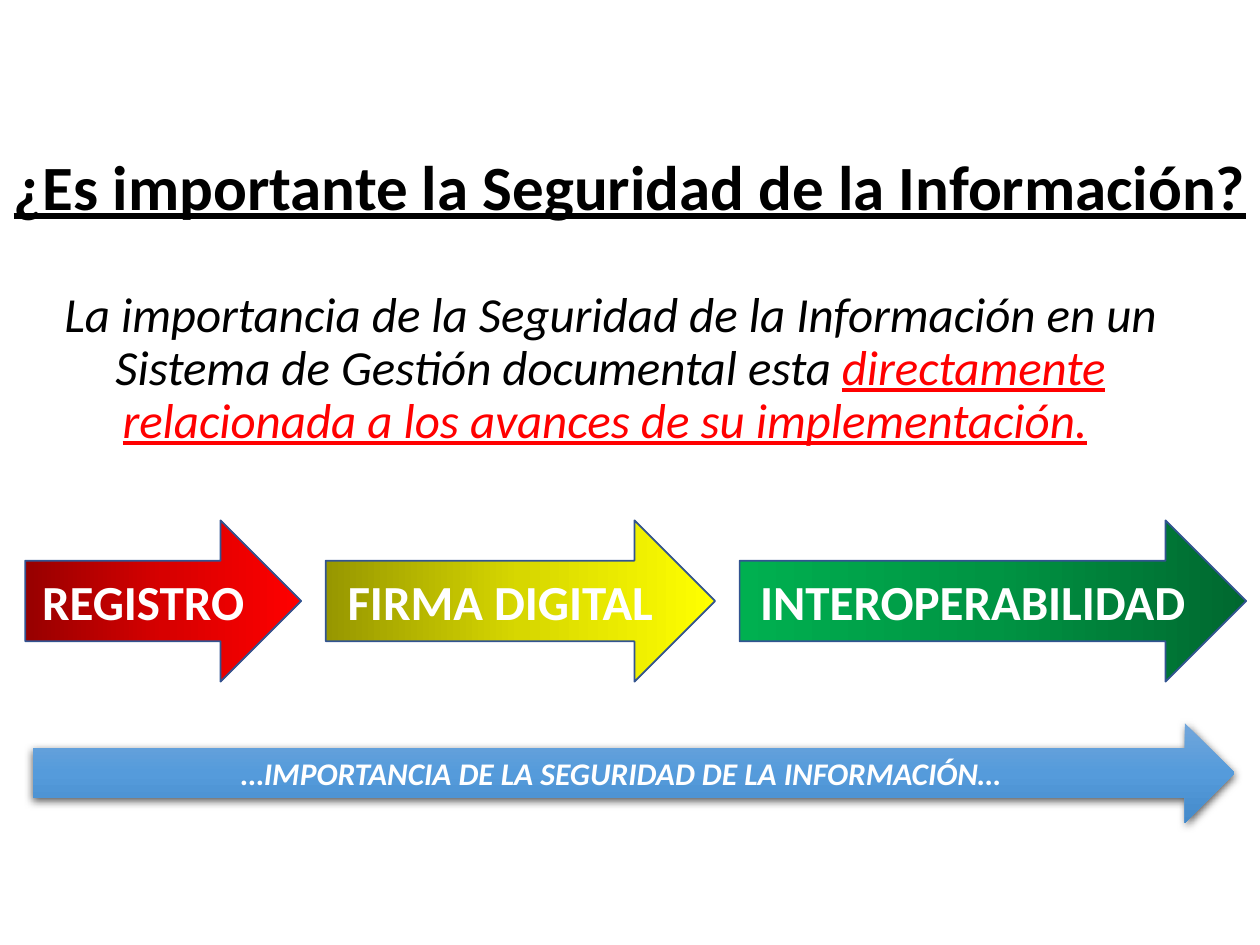
from copy import deepcopy
from lxml import etree
from pptx import Presentation, util as u
from pptx.dml.color import RGBColor as Rgb
from pptx.enum import shapes, text
from pptx.oxml.ns import qn

BLACK, WHITE = Rgb(0, 0, 0), Rgb(255, 255, 255)
RED = Rgb(255, 0, 0)
EDGE = Rgb(0x32, 0x54, 0x91)
REDS = [Rgb(0x97, 0, 0), Rgb(0xD7, 0, 0), RED]
YELLOWS = [Rgb(0x97, 0x97, 0), Rgb(0xD7, 0xD7, 0), Rgb(255, 255, 0)]
GREENS = [Rgb(0, 0x68, 0x2F), Rgb(0, 0x94, 0x43), Rgb(0, 0xB0, 0x50)]
BLUES = [Rgb(0x71, 0xA6, 0xDB), Rgb(0x55, 0x9B, 0xDB), Rgb(0x44, 0x8A, 0xCA)]
FONT = "Calibri"


def place(shape, box):
    shape.left, shape.top, shape.width, shape.height = map(u.Inches, box)


def style(font, size, color, bold=False, italic=False):
    font.name, font.size = FONT, u.Pt(size)
    font.bold, font.italic = bold, italic
    font.color.rgb = color


def set_frame(shape, anchor):
    frame = shape.text_frame
    frame.word_wrap = True
    frame.auto_size = text.MSO_AUTO_SIZE.NONE
    frame.vertical_anchor = anchor
    para = frame.paragraphs[0]
    para.alignment = text.PP_ALIGN.CENTER
    return para


def add_title(slide, box):
    title = slide.shapes.title
    place(title, box)
    para = set_frame(title, text.MSO_ANCHOR.MIDDLE)
    para.text = "¿Es importante la Seguridad de la Información?"
    para.line_spacing = 0.9
    style(para.font, 36, BLACK, bold=True)
    para.font.underline = True


def add_body(slide, box):
    body = slide.placeholders[1]
    place(body, box)
    para = set_frame(body, text.MSO_ANCHOR.TOP)
    para.line_spacing, para.space_before = 0.9, u.Pt(0)
    # Plain paragraph, without bullet or indent
    props = para._p.get_or_add_pPr()
    props.set("marL", "0")
    props.set("indent", "0")
    etree.SubElement(props, qn("a:buNone"))
    parts = [
        ("La importancia de la Seguridad de la Información en un Sistema "
         "de Gestión documental esta ", BLACK, False),
        ("directamente relacionada a los avances de su implementación.",
         RED, True),
        (" ", BLACK, False),
    ]
    for words, color, line in parts:
        run = para.add_run()
        run.text = words
        style(run.font, 28, color, italic=True)
        run.font.underline = line


def add_arrow(slide, box, words, colors, angle, size, italic=False):
    arrow = slide.shapes.add_shape(
        shapes.MSO_SHAPE.RIGHT_ARROW, *map(u.Inches, box))
    arrow.shadow.inherit = False
    # Three evenly spaced gradient stops
    fill = arrow.fill
    fill.gradient()
    fill.gradient_angle = angle
    stops = arrow._element.spPr.find(".//" + qn("a:gsLst"))
    stops.insert(1, deepcopy(stops[0]))
    for i, (stop, color) in enumerate(zip(fill.gradient_stops, colors)):
        stop.position = i / 2
        stop.color.rgb = color
    para = set_frame(arrow, text.MSO_ANCHOR.MIDDLE)
    para.text = words
    style(para.font, size, WHITE, bold=True, italic=italic)
    return arrow


def add_steps(slide, box):
    left, top, width, height = box
    steps = [("REGISTRO", 2.19, REDS, 0),
             ("FIRMA DIGITAL", 3.09, YELLOWS, 0),
             ("INTEROPERABILIDAD", 4.02, GREENS, 180)]
    gap = (width - sum(step[1] for step in steps)) / (len(steps) - 1)
    for words, wide, colors, angle in steps:
        arrow = add_arrow(slide, (left, top, wide, height),
                          words, colors, angle, 28)
        arrow.line.color.rgb = EDGE
        arrow.line.width = u.Pt(1)
        left += wide + gap


def add_banner(slide, box):
    arrow = add_arrow(
        slide, box, "…IMPORTANCIA DE LA SEGURIDAD DE LA INFORMACIÓN…",
        BLUES, 270, 18, italic=True)
    arrow.line.fill.background()
    # Soft shadow below
    effects = arrow._element.spPr.find(qn("a:effectLst"))
    shadow = etree.SubElement(
        effects, qn("a:outerShdw"), blurRad=str(u.Pt(4.5)),
        dist=str(u.Pt(1.5)), dir="5400000", algn="ctr", rotWithShape="0")
    color = etree.SubElement(shadow, qn("a:srgbClr"), val="000000")
    etree.SubElement(color, qn("a:alpha"), val="63000")


def main():
    deck = Presentation()
    deck.slide_width, deck.slide_height = u.Inches(10), u.Inches(7.5)
    slide = deck.slides.add_slide(deck.slide_layouts[1])
    add_body(slide, (0, 2.25, 9.69, 4.8))
    add_title(slide, (0, 1.09, 10, 0.83))
    add_steps(slide, (0.2, 4.13, 9.69, 1.28))
    add_banner(slide, (0.26, 5.74, 9.54, 0.79))
    deck.save("out.pptx")


if __name__ == "__main__":
    main()
